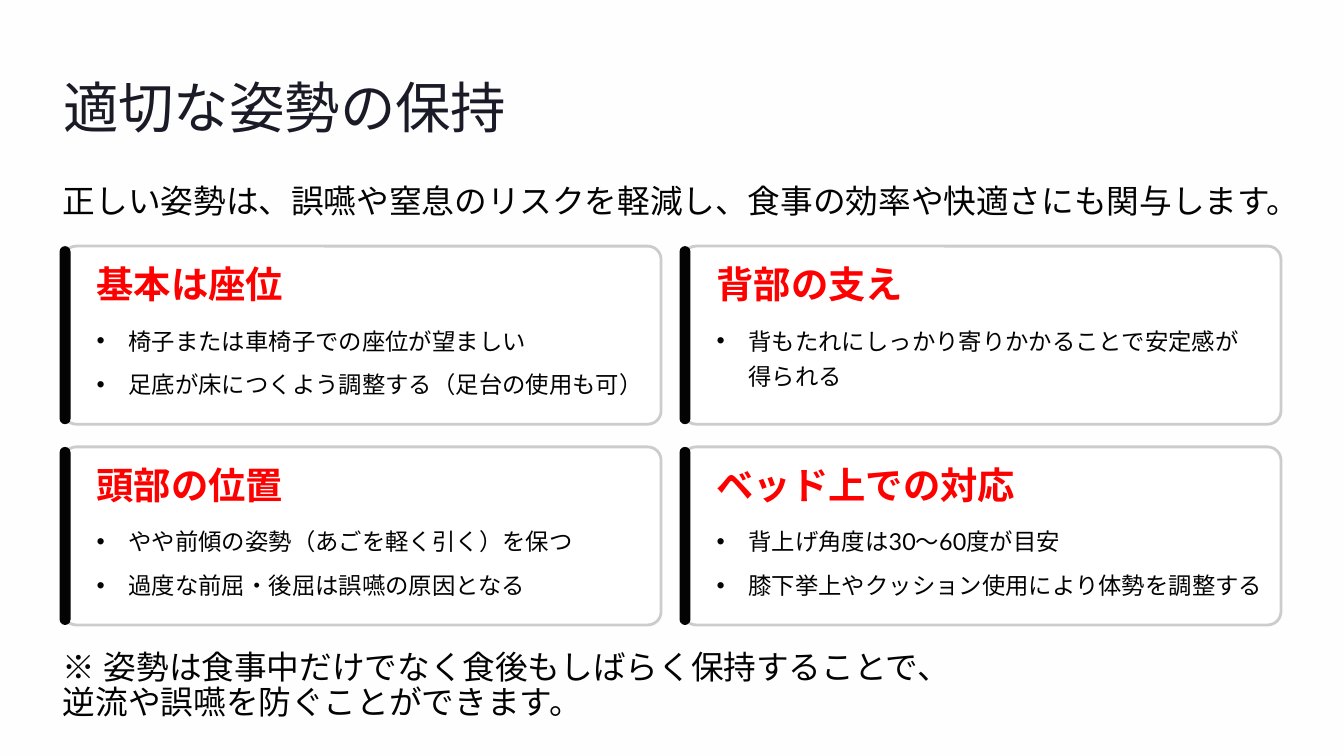
from dataclasses import dataclass

from lxml import etree
from pptx import Presentation
from pptx.dml.color import RGBColor
from pptx.enum.lang import MSO_LANGUAGE_ID
from pptx.enum.shapes import MSO_SHAPE
from pptx.enum.text import MSO_ANCHOR, MSO_AUTO_SIZE, PP_ALIGN
from pptx.oxml.ns import qn
from pptx.util import Inches, Pt

ROUNDED = MSO_SHAPE.ROUNDED_RECTANGLE
TOP, LEFT = MSO_ANCHOR.TOP, PP_ALIGN.LEFT
NO_AUTOFIT = MSO_AUTO_SIZE.NONE
JAPANESE = MSO_LANGUAGE_ID.JAPANESE
COMPARISON_LAYOUT = 4

COLORS = {
    "background": "FEFEFE",
    "title": "1B1B27",
    "text": "030303",
    "heading": "FF0000",
    "card": "FFFFFF",
    "border": "CCCCCC",
}


@dataclass(frozen=True)
class TextStyle:
    font: str
    size: float
    color: str
    line_points: float
    bold: bool = False
    bulleted: bool = False
    gap_points: float = 0


@dataclass(frozen=True)
class Card:
    heading: str
    items: tuple[str, ...]
    list_width: float = 6.7


TITLE = TextStyle("Inter", 47.5, "title", 59.5)
BODY = TextStyle("Lato", 28, "text", 30.5)
HEADING = TextStyle("Inter", 32, "heading", 29.5, bold=True)
LIST = TextStyle("Lato", 20, "text", 30.5, bulleted=True, gap_points=7)

CARDS = (
    Card("基本は座位", ("椅子または車椅子での座位が望ましい",
                    "足底が床につくよう調整する（足台の使用も可）")),
    Card("背部の支え", ("背もたれにしっかり寄りかかることで安定感が得られる",),
         list_width=6.42),
    Card("頭部の位置", ("やや前傾の姿勢（あごを軽く引く）を保つ",
                    "過度な前屈・後屈は誤嚥の原因となる")),
    Card("ベッド上での対応", ("背上げ角度は30～60度が目安",
                       "膝下挙上やクッション使用により体勢を調整する")),
)

# Card grid, in inches
MARGIN, GRID_TOP = 0.75, 2.93
CARD_WIDTH, CARD_HEIGHT = 7.12, 2.12
COLUMN_STEP, ROW_STEP = 7.38, 2.39
BAR_WIDTH, BAR_OVERHANG = 0.13, 0.04
PADDING, HEADING_WIDTH = 0.4, 6.42


def color(name: str) -> RGBColor:
    return RGBColor.from_string(COLORS[name])


def place(shape, left: float, top: float, width: float, height: float) -> None:
    shape.left, shape.top = Inches(left), Inches(top)
    shape.width, shape.height = Inches(width), Inches(height)


def add_bullet(paragraph) -> None:
    properties = paragraph._p.get_or_add_pPr()
    properties.set("marL", str(Inches(0.38)))
    properties.set("indent", str(-Inches(0.38)))
    etree.SubElement(properties, qn("a:buChar")).set("char", "•")


def format_run(run, style: TextStyle) -> None:
    run.font.name = style.font
    run.font.size = Pt(style.size)
    run.font.bold = style.bold
    run.font.color.rgb = color(style.color)
    run.font.language_id = JAPANESE
    # Japanese characters take the same typeface
    east_asian = etree.SubElement(run._r.get_or_add_rPr(), qn("a:ea"))
    east_asian.set("typeface", style.font)


def write(shape, lines: tuple[str, ...], style: TextStyle) -> None:
    frame = shape.text_frame
    frame.text = "\n".join(lines)
    frame.word_wrap = True
    frame.auto_size = NO_AUTOFIT
    frame.vertical_anchor = TOP
    frame.margin_left = frame.margin_right = 0
    frame.margin_top = frame.margin_bottom = 0
    for paragraph in frame.paragraphs:
        paragraph.alignment = LEFT
        paragraph.line_spacing = Pt(style.line_points)
        paragraph.space_before = Pt(0)
        paragraph.space_after = Pt(style.gap_points)
        if style.bulleted:
            add_bullet(paragraph)
        for run in paragraph.runs:
            format_run(run, style)


def add_text(slide, left: float, top: float, width: float, height: float,
             lines: tuple[str, ...], style: TextStyle) -> None:
    box = slide.shapes.add_textbox(0, 0, 0, 0)
    place(box, left, top, width, height)
    write(box, lines, style)


def add_rounded(slide, left: float, top: float, width: float, radius: float,
                fill: str):
    shape = slide.shapes.add_shape(ROUNDED, 0, 0, 0, 0)
    place(shape, left, top, width, CARD_HEIGHT)
    shape.adjustments[0] = radius
    shape.shadow.inherit = False
    shape.fill.solid()
    shape.fill.fore_color.rgb = color(fill)
    shape.line.fill.background()
    return shape


def add_card(slide, card: Card, placeholder, left: float, top: float) -> None:
    panel = add_rounded(slide, left, top, CARD_WIDTH, 0.075, "card")
    panel.line.color.rgb = color("border")
    panel.line.width = Pt(2.4)
    add_rounded(slide, left - BAR_OVERHANG, top, BAR_WIDTH, 0.5, "text")

    text_left = left + PADDING
    add_text(slide, text_left, top + 0.3, HEADING_WIDTH, 0.42, (card.heading,), HEADING)
    place(placeholder, text_left, top + 0.87, card.list_width, 0.95)
    write(placeholder, card.items, LIST)
    # Bring the list in front of its card
    slide.shapes._spTree.append(placeholder._element)


def main() -> None:
    presentation = Presentation()
    presentation.slide_width, presentation.slide_height = Inches(16), Inches(9)
    layout = presentation.slide_layouts[COMPARISON_LAYOUT]
    slide = presentation.slides.add_slide(layout)
    slide.background.fill.solid()
    slide.background.fill.fore_color.rgb = color("background")

    # Title and introduction
    title = slide.shapes.title
    place(title, MARGIN, 0.84, 14.5, 0.83)
    write(title, ("適切な姿勢の保持",), TITLE)
    add_text(slide, MARGIN, 2.2, 15, 0.43,
             ("正しい姿勢は、誤嚥や窒息のリスクを軽減し、食事の効率や快適さにも関与します。",), BODY)

    # Two by two cards, one body placeholder each
    bodies = [shape for shape in slide.placeholders if shape != title]
    for index, (card, body) in enumerate(zip(CARDS, bodies)):
        row, column = divmod(index, 2)
        add_card(slide, card, body, MARGIN + column * COLUMN_STEP,
                 GRID_TOP + row * ROW_STEP)

    # Closing note
    add_text(slide, MARGIN, 7.74, 14.5, 0.85,
             ("※ 姿勢は食事中だけでなく食後もしばらく保持することで、",
              "逆流や誤嚥を防ぐことができます。"), BODY)
    presentation.save("out.pptx")


if __name__ == "__main__":
    main()
